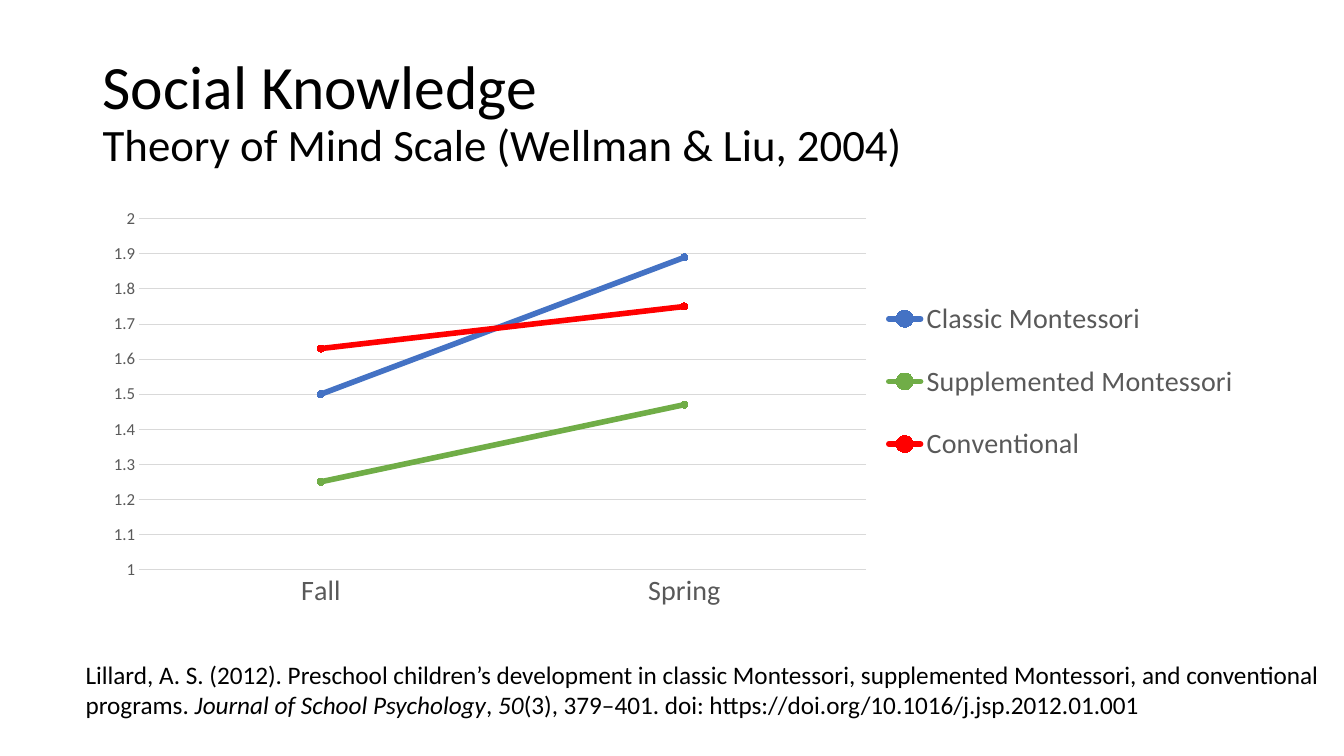
from pptx import Presentation
from pptx.chart.data import CategoryChartData
from pptx.dml.color import RGBColor
from pptx.enum import chart as kinds, text
from pptx.oxml import ns, parse_xml
from pptx.util import Inches, Pt

FONT = "Calibri"
BLACK = RGBColor(0x00, 0x00, 0x00)
GRAY = RGBColor(0x59, 0x59, 0x59)
RULE = RGBColor(0xD9, 0xD9, 0xD9)
BLUE = RGBColor(0x44, 0x72, 0xC4)
GREEN = RGBColor(0x70, 0xAD, 0x47)
RED = RGBColor(0xFF, 0x00, 0x00)


def style(font, size, color):
    font.name = FONT
    font.size = Pt(size)
    font.color.rgb = color


def place(part, index, x, y, width, height, inner=False):
    """Give a chart part a fixed place, in fractions of the chart."""
    for old in part.findall(ns.qn("c:layout")):
        part.remove(old)
    target = '<c:layoutTarget val="inner"/>' if inner else ""
    part.insert(index, parse_xml(
        f'<c:layout {ns.nsdecls("c")}><c:manualLayout>{target}'
        '<c:xMode val="edge"/><c:yMode val="edge"/>'
        f'<c:x val="{x}"/><c:y val="{y}"/><c:w val="{width}"/><c:h val="{height}"/>'
        '</c:manualLayout></c:layout>'))


deck = Presentation()
deck.slide_width = Inches(13.33)
deck.slide_height = Inches(7.5)
page = deck.slides.add_slide(deck.slide_layouts[6])

# Title
box = page.shapes.add_textbox(Inches(0.92), Inches(0.4), Inches(11.5), Inches(1.45))
frame = box.text_frame
frame.word_wrap = True
frame.vertical_anchor = text.MSO_ANCHOR.MIDDLE
para = frame.paragraphs[0]
para.line_spacing = 0.9
span = para.add_run()
span.text = "Social Knowledge"
style(span.font, 44, BLACK)
para.add_line_break()
span = para.add_run()
span.text = "Theory of Mind Scale (Wellman & Liu, 2004)"
style(span.font, 32, BLACK)

# Line chart of scores by season
groups = [
    ("Classic Montessori", (1.5, 1.89), BLUE),
    ("Supplemented Montessori", (1.25, 1.47), GREEN),
    ("Conventional", (1.63, 1.75), RED),
]
scores = CategoryChartData()
scores.categories = ["Fall", "Spring"]
for name, values, color in groups:
    scores.add_series(name, values)
chart = page.shapes.add_chart(
    kinds.XL_CHART_TYPE.LINE_MARKERS,
    Inches(0.92), Inches(2), Inches(11.5), Inches(4.76), scores).chart
style(chart.font, 10, BLACK)
chart.has_title = False
chart.plots[0].vary_by_categories = False

for series, (name, values, color) in zip(chart.plots[0].series, groups):
    series.smooth = False
    series.format.line.color.rgb = color
    series.format.line.width = Pt(4)
    for line in series.format.line._ln.iter(ns.qn("a:ln")):
        line.set("cap", "rnd")
    marker = series.marker
    marker.style = kinds.XL_MARKER_STYLE.CIRCLE
    marker.size = 5
    marker.format.fill.solid()
    marker.format.fill.fore_color.rgb = color
    marker.format.line.color.rgb = color

# Axes
seasons, scale = chart.category_axis, chart.value_axis
for axis, size in ((seasons, 20), (scale, 12)):
    axis.major_tick_mark = kinds.XL_TICK_MARK.NONE
    axis.minor_tick_mark = kinds.XL_TICK_MARK.NONE
    style(axis.tick_labels.font, size, GRAY)
scale.minimum_scale = 1
scale.maximum_scale = 2
scale.major_unit = 0.1
scale.format.line.fill.background()
scale.has_major_gridlines = True
for rule in (seasons.format.line, scale.major_gridlines.format.line):
    rule.color.rgb = RULE
    rule.width = Pt(0.75)

# Legend and plot places
chart.has_legend = True
legend = chart.legend
legend.position = kinds.XL_LEGEND_POSITION.BOTTOM
legend.include_in_layout = False
style(legend.font, 20, GRAY)
place(legend._element, 1, 0.68, 0.15, 0.31, 0.45)
place(chart._chartSpace.chart.plotArea, 0, 0.04, 0.036, 0.627, 0.731, inner=True)

# Citation
citation = [
    [("Lillard, A. S. (2012). Preschool children’s development in classic Montessori, "
      "supplemented Montessori, and conventional", False)],
    [("programs. ", False), ("Journal of School Psychology", True), (", ", False),
     ("50", True),
     ("(3), 379–401. doi: https://doi.org/10.1016/j.jsp.2012.01.001", False)],
]
box = page.shapes.add_textbox(Inches(0.75), Inches(6.49), Inches(12.58), Inches(1.01))
frame = box.text_frame
frame.word_wrap = False
for number, pieces in enumerate(citation):
    para = frame.add_paragraph() if number else frame.paragraphs[0]
    for words, italic in pieces:
        span = para.add_run()
        span.text = words
        style(span.font, 18, BLACK)
        span.font.italic = italic

deck.save("out.pptx")
